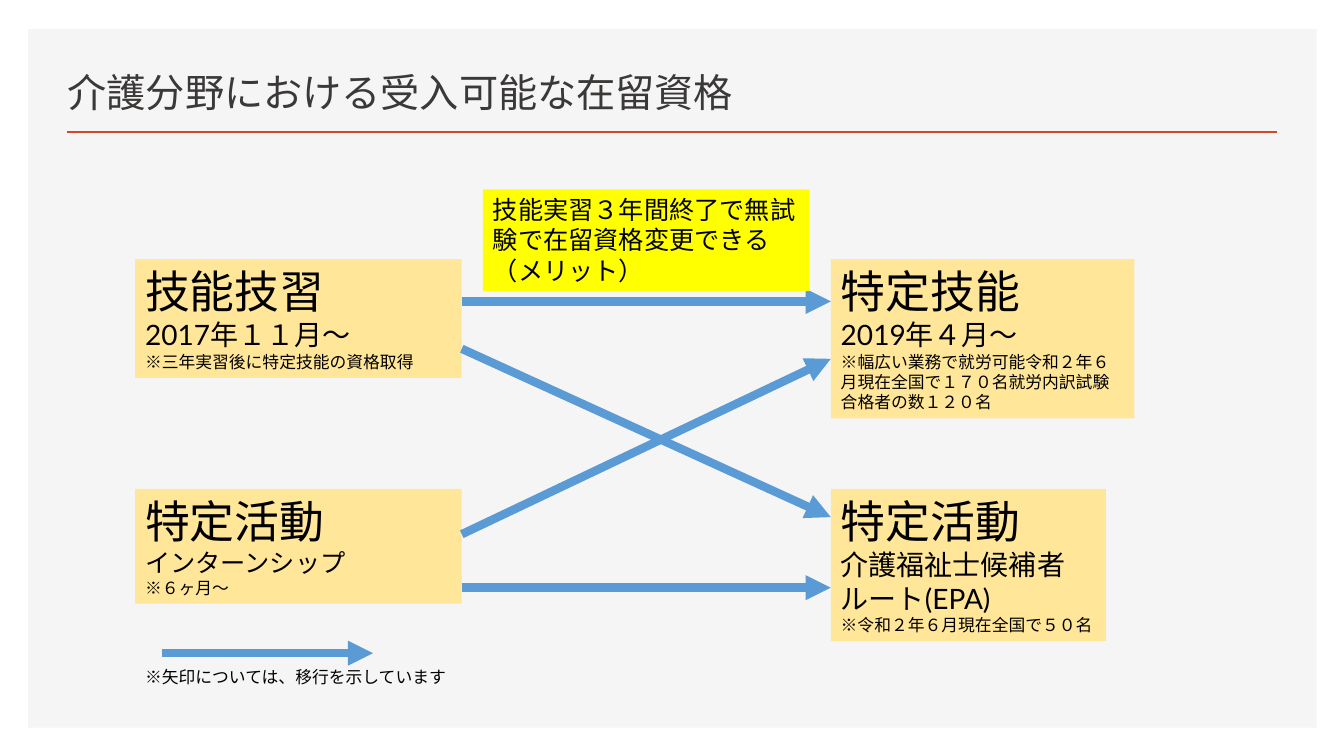
import pptx
import pptx.dml.color
import pptx.enum.shapes
import pptx.enum.text
import pptx.oxml
import pptx.oxml.ns
import pptx.util
from dataclasses import dataclass

Inches = pptx.util.Inches


@dataclass(frozen=True)
class Theme:
    title_font: str = "Noto Sans CJK JP"
    body_font: str = "Lato"
    panel: str = "F5F5F5"
    rule: str = "D24726"
    title: str = "3B3838"
    text: str = "000000"
    status: str = "FFE699"
    merit: str = "FFFF00"
    arrow: str = "5B9BD5"
    title_size: int = 28
    name_size: int = 32
    period_size: int = 20
    body_size: int = 18
    note_size: int = 12
    rule_width: int = 2
    arrow_width: int = 6


THEME = Theme()
LEFT, RIGHT = 1.34, 8.24
TOP, BOTTOM = 2.57, 4.85
BOX_WIDTH = 3.24
LEFT_EDGE = LEFT + BOX_WIDTH

TITLE = "介護分野における受入可能な在留資格"

# left, top, width, height, (name, detail, detail size, note)
STATUSES = [
    (LEFT, TOP, BOX_WIDTH, 1.18,
     ("技能技習", "2017年１１月～", THEME.period_size, "※三年実習後に特定技能の資格取得")),
    (RIGHT, TOP, 3.01, 1.58,
     ("特定技能", "2019年４月～", THEME.period_size,
      "※幅広い業務で就労可能令和２年６月現在全国で１７０名就労内訳試験合格者の数１２０名")),
    (LEFT, BOTTOM, BOX_WIDTH, 1.14,
     ("特定活動", "インターンシップ", THEME.body_size, "※６ヶ月～")),
    (RIGHT, BOTTOM, 2.73, 1.51,
     ("特定活動", "介護福祉士候補者ルート(EPA)", THEME.period_size, "※令和２年６月現在全国で５０名")),
]
MERIT = ["技能実習３年間終了で無試験で在留資格変更できる", "（メリット）"]
LEGEND = "※矢印については、移行を示しています"

# start height at the left boxes, end height at the right boxes
TRANSITIONS = [(3.46, 5.13), (2.99, 2.99), (5.3, 3.56), (5.83, 5.83)]


def color(value):
    return pptx.dml.color.RGBColor.from_string(value)


def add_run(paragraph, text, size, font, fill):
    run = paragraph.add_run()
    run.text = text
    run.font.size = pptx.util.Pt(size)
    run.font.name = font
    run.font.color.rgb = color(fill)
    east_asian = pptx.oxml.parse_xml(
        f'<a:ea {pptx.oxml.ns.nsdecls("a")} typeface="{font}"/>')
    run.font._element.find(pptx.oxml.ns.qn("a:latin")).addnext(east_asian)


def write_lines(shape, lines):
    """Write (text, size) pairs as left-aligned paragraphs from the top."""
    frame = shape.text_frame
    frame.word_wrap = True
    frame.auto_size = pptx.enum.text.MSO_AUTO_SIZE.SHAPE_TO_FIT_TEXT
    frame.vertical_anchor = pptx.enum.text.MSO_ANCHOR.TOP
    for index, (text, size) in enumerate(lines):
        paragraph = frame.add_paragraph() if index else frame.paragraphs[0]
        paragraph.alignment = pptx.enum.text.PP_ALIGN.LEFT
        add_run(paragraph, text, size, THEME.body_font, THEME.text)


def add_box(slide, left, top, width, height, fill):
    shape = slide.shapes.add_shape(
        pptx.enum.shapes.MSO_SHAPE.RECTANGLE,
        Inches(left), Inches(top), Inches(width), Inches(height))
    shape.shadow.inherit = False
    shape.fill.solid()
    shape.fill.fore_color.rgb = color(fill)
    shape.line.fill.background()
    return shape


def add_line(slide, start, end, fill, width):
    connector = slide.shapes.add_connector(
        pptx.enum.shapes.MSO_CONNECTOR.STRAIGHT,
        *(Inches(value) for value in (*start, *end)))
    connector.line.color.rgb = color(fill)
    connector.line.width = pptx.util.Pt(width)
    connector._element.spPr.append(
        pptx.oxml.parse_xml(f'<a:effectLst {pptx.oxml.ns.nsdecls("a")}/>'))
    return connector


def add_arrow(slide, start, end):
    connector = add_line(slide, start, end, THEME.arrow, THEME.arrow_width)
    connector.line._get_or_add_ln().append(pptx.oxml.parse_xml(
        f'<a:tailEnd {pptx.oxml.ns.nsdecls("a")} type="triangle"/>'))


def add_title(slide):
    title = slide.shapes.title
    title.left, title.top = Inches(0.57), Inches(0.49)
    title.width, title.height = Inches(12.1), Inches(0.7)
    frame = title.text_frame
    frame.word_wrap = True
    frame.auto_size = pptx.enum.text.MSO_AUTO_SIZE.NONE
    frame.vertical_anchor = pptx.enum.text.MSO_ANCHOR.BOTTOM
    paragraph = frame.paragraphs[0]
    paragraph.alignment = pptx.enum.text.PP_ALIGN.LEFT
    add_run(paragraph, TITLE, THEME.title_size, THEME.title_font, THEME.title)


def main():
    presentation = pptx.Presentation()
    presentation.slide_width = Inches(13.33)
    presentation.slide_height = Inches(7.5)
    slide = presentation.slides.add_slide(presentation.slide_layouts[5])

    panel = add_box(slide, 0.28, 0.29, 12.78, 6.93, THEME.panel)
    slide.shapes.title._element.addprevious(panel._element)
    add_line(slide, (0.66, 1.31), (12.67, 1.31), THEME.rule, THEME.rule_width)
    add_title(slide)

    for left, top, width, height, (name, detail, detail_size, note) in STATUSES:
        box = add_box(slide, left, top, width, height, THEME.status)
        write_lines(box, [(name, THEME.name_size), (detail, detail_size),
                          (note, THEME.note_size)])

    for start, end in TRANSITIONS:
        add_arrow(slide, (LEFT_EDGE, start), (RIGHT, end))

    merit = add_box(slide, 4.79, 1.88, BOX_WIDTH, 1.01, THEME.merit)
    write_lines(merit, [(line, THEME.body_size) for line in MERIT])

    add_arrow(slide, (1.61, 6.48), (3.7, 6.48))
    legend = slide.shapes.add_textbox(
        Inches(LEFT), Inches(6.57), Inches(4.11), Inches(0.3))
    write_lines(legend, [(LEGEND, THEME.note_size)])

    presentation.save("out.pptx")


if __name__ == "__main__":
    main()
